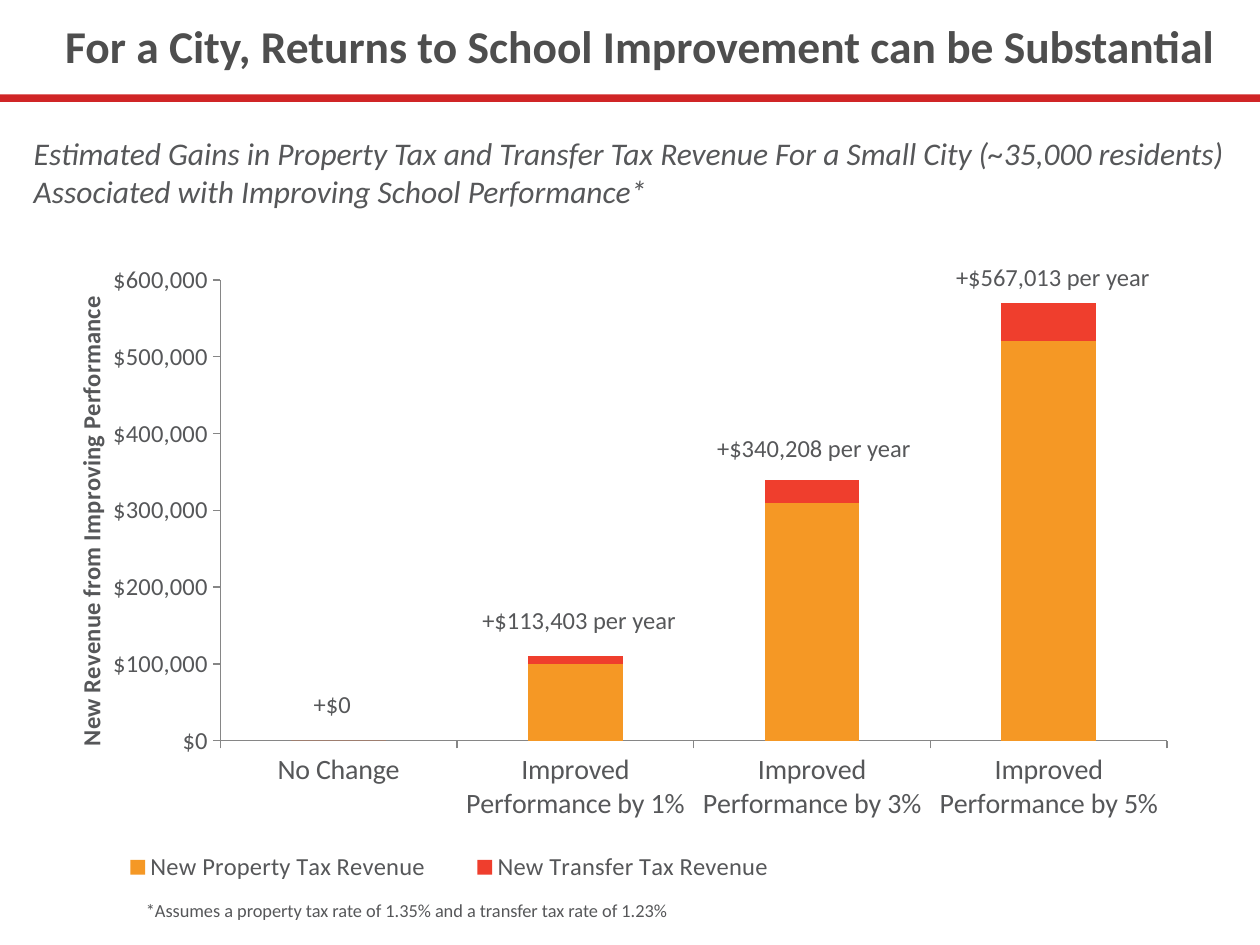
from dataclasses import dataclass

from lxml.etree import SubElement
from pptx import Presentation
from pptx.chart.chart import Chart
from pptx.chart.data import CategoryChartData
from pptx.dml.color import RGBColor
from pptx.enum.chart import XL_CHART_TYPE, XL_LEGEND_POSITION, XL_TICK_MARK
from pptx.enum.shapes import MSO_SHAPE
from pptx.enum.text import MSO_ANCHOR, MSO_AUTO_SIZE, PP_ALIGN
from pptx.oxml.ns import qn
from pptx.slide import Slide
from pptx.text.text import Font, TextFrame
from pptx.util import Pt


@dataclass(frozen=True)
class Theme:
    font: str = "Calibri"
    title_color: str = "4E4E4E"
    text_color: str = "565759"
    rule_color: str = "D02526"
    axis_color: str = "868686"
    property_color: str = "F59825"
    transfer_color: str = "EF3E2D"
    title_size: float = 26
    subtitle_size: float = 18
    category_size: float = 16
    label_size: float = 14
    note_size: float = 10.5


@dataclass(frozen=True)
class Box:
    left: float
    top: float
    width: float = 0
    height: float = 0


@dataclass(frozen=True)
class Caption:
    text: str
    box: Box
    size: float
    italic: bool = False
    wrap: bool = False


@dataclass(frozen=True)
class Revenue:
    name: str
    values: tuple[int, ...]
    color: str


THEME = Theme()
TITLE = "For a City, Returns to School Improvement can be Substantial"
TITLE_BOX = Box(30, 3.6, 684, 44.64)
RULE_BOX = Box(0, 54, 720, 4.3)
CHART_BOX = Box(30, 145.9, 648, 370)
PLOT_LAYOUT = Box(0.148, 0.038, 0.835, 0.712)
LEGEND_LAYOUT = Box(0.03, 0.91, 0.64, 0.07)
AXIS_TITLE_LAYOUT = Box(0.015, 0.056)
CATEGORIES = ("No Change", *(f"Improved Performance by {gain}%" for gain in (1, 3, 5)))
REVENUES = (
    Revenue("New Property Tax Revenue", (0, 100000, 310000, 520000), THEME.property_color),
    Revenue("New Transfer Tax Revenue", (0, 10000, 30000, 50000), THEME.transfer_color),
)
CAPTIONS = (
    Caption("+$0", Box(172.2, 390.2, 36, 24.5), THEME.label_size),
    Caption("+$113,403 per year", Box(268.5, 342.3, 126, 24.5), THEME.label_size),
    Caption("+$340,208 per year", Box(402.7, 244, 126, 24.5), THEME.label_size),
    Caption("+$567,013 per year", Box(539.2, 146.2, 126, 24.5), THEME.label_size),
    Caption(
        "Estimated Gains in Property Tax and Transfer Tax Revenue For a Small City "
        "(~35,000 residents) Associated with Improving School Performance*",
        Box(12.2, 73, 702, 51), THEME.subtitle_size, italic=True, wrap=True,
    ),
    Caption(
        "*Assumes a property tax rate of 1.35% and a transfer tax rate of 1.23%",
        Box(76.3, 510, 319, 20), THEME.note_size,
    ),
)


def points(box: Box) -> tuple[Pt, Pt, Pt, Pt]:
    return Pt(box.left), Pt(box.top), Pt(box.width), Pt(box.height)


def style_font(font: Font, size: float, color: str = THEME.text_color,
               bold: bool = False, italic: bool = False) -> None:
    font.name = THEME.font
    font.size = Pt(size)
    font.bold = bold
    font.italic = italic
    font.color.rgb = RGBColor.from_string(color)


def write_text(text_frame: TextFrame, text: str, size: float, color: str = THEME.text_color,
               bold: bool = False, italic: bool = False) -> None:
    text_frame.text = text
    paragraph = text_frame.paragraphs[0]
    paragraph.alignment = PP_ALIGN.LEFT
    style_font(paragraph.runs[0].font, size, color, bold, italic)


def add_title(slide: Slide) -> None:
    title = slide.shapes.title
    title.left, title.top, title.width, title.height = points(TITLE_BOX)
    write_text(title.text_frame, TITLE, THEME.title_size, THEME.title_color, bold=True)
    title.text_frame.vertical_anchor = MSO_ANCHOR.MIDDLE
    title.text_frame.auto_size = MSO_AUTO_SIZE.NONE


def add_rule(slide: Slide) -> None:
    rule = slide.shapes.add_shape(MSO_SHAPE.RECTANGLE, *points(RULE_BOX))
    rule.shadow.inherit = False
    rule.fill.solid()
    rule.fill.fore_color.rgb = RGBColor.from_string(THEME.rule_color)
    rule.line.fill.background()


def add_caption(slide: Slide, caption: Caption) -> None:
    text_box = slide.shapes.add_textbox(*points(caption.box))
    text_box.text_frame.word_wrap = caption.wrap
    text_box.text_frame.auto_size = MSO_AUTO_SIZE.SHAPE_TO_FIT_TEXT
    write_text(text_box.text_frame, caption.text, caption.size, italic=caption.italic)


def set_layout(parent, anchor_tag: str, box: Box, inner: bool = False) -> None:
    for existing in parent.findall(qn("c:layout")):
        parent.remove(existing)
    layout = SubElement(parent, qn("c:layout"))
    manual = SubElement(layout, qn("c:manualLayout"))
    settings = {"layoutTarget": "inner"} if inner else {}
    settings |= {"xMode": "edge", "yMode": "edge", "x": box.left, "y": box.top}
    if box.width:
        settings |= {"w": box.width, "h": box.height}
    for name, value in settings.items():
        SubElement(manual, qn(f"c:{name}")).set("val", str(value))
    anchor = parent.find(qn(anchor_tag))
    if anchor is None:
        parent.insert(0, layout)
    else:
        anchor.addnext(layout)


def format_axes(chart: Chart) -> None:
    for axis, size in ((chart.category_axis, THEME.category_size),
                       (chart.value_axis, THEME.label_size)):
        axis.has_major_gridlines = False
        axis.major_tick_mark = XL_TICK_MARK.OUTSIDE
        axis.minor_tick_mark = XL_TICK_MARK.NONE
        axis.format.line.color.rgb = RGBColor.from_string(THEME.axis_color)
        axis.format.line.width = Pt(0.75)
        style_font(axis.tick_labels.font, size)
    value_axis = chart.value_axis
    value_axis.minimum_scale = 0
    value_axis.maximum_scale = 600000
    value_axis.major_unit = 100000
    value_axis.tick_labels.number_format = '"$"#,##0'
    value_axis.tick_labels.number_format_is_linked = False
    title_frame = value_axis.axis_title.text_frame
    title_frame.text = "New Revenue from Improving Performance"
    style_font(title_frame.paragraphs[0].runs[0].font, THEME.label_size, bold=True)


def add_revenue_chart(slide: Slide) -> None:
    chart_data = CategoryChartData()
    chart_data.categories = CATEGORIES
    for revenue in REVENUES:
        chart_data.add_series(revenue.name, revenue.values)
    chart = slide.shapes.add_chart(
        XL_CHART_TYPE.COLUMN_STACKED, *points(CHART_BOX), chart_data).chart
    chart.has_title = False
    style_font(chart.font, THEME.label_size)
    plot = chart.plots[0]
    plot.vary_by_categories = False
    plot.gap_width = 150
    plot.overlap = 100
    for series, revenue in zip(plot.series, REVENUES):
        series.format.fill.solid()
        series.format.fill.fore_color.rgb = RGBColor.from_string(revenue.color)
    format_axes(chart)
    chart.has_legend = True
    chart.legend.position = XL_LEGEND_POSITION.BOTTOM
    chart.legend.include_in_layout = False
    style_font(chart.legend.font, THEME.label_size)
    plot_area = chart.element.find(".//" + qn("c:plotArea"))
    legend = chart.element.find(".//" + qn("c:legend"))
    axis_title = plot_area.find(".//" + qn("c:title"))
    set_layout(plot_area, "c:layout", PLOT_LAYOUT, inner=True)
    set_layout(legend, "c:legendPos", LEGEND_LAYOUT)
    set_layout(axis_title, "c:tx", AXIS_TITLE_LAYOUT)


def main() -> None:
    presentation = Presentation()
    presentation.slide_width = Pt(720)
    presentation.slide_height = Pt(540)
    slide = presentation.slides.add_slide(presentation.slide_layouts.get_by_name("Title Only"))
    add_rule(slide)
    add_title(slide)
    add_revenue_chart(slide)
    for caption in CAPTIONS:
        add_caption(slide, caption)
    presentation.save("out.pptx")


if __name__ == "__main__":
    main()
